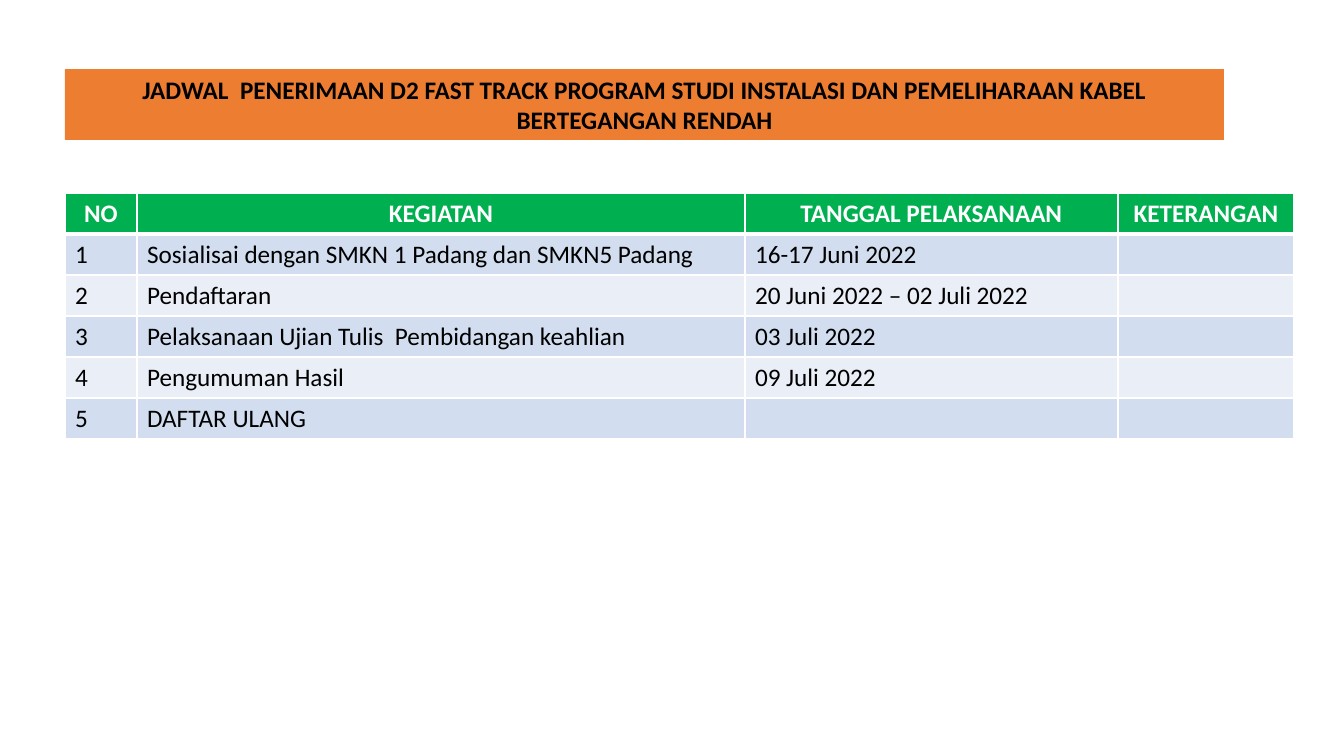
from dataclasses import dataclass
from lxml.etree import SubElement
from pptx import Presentation
from pptx.dml.color import RGBColor
from pptx.enum.shapes import MSO_SHAPE
from pptx.enum.text import MSO_ANCHOR, PP_ALIGN
from pptx.oxml.ns import qn
from pptx.util import Pt

PX = 9072


@dataclass(frozen=True)
class Theme:
    font: str = "Calibri"
    size: int = 18
    ink: str = "000000"
    white: str = "FFFFFF"
    banner: str = "ED7D31"
    head: str = "00B050"
    bands: tuple = ("D2DEEF", "EAEFF7")
    thin: int = 1
    thick: int = 3


THEME = Theme()
TITLE = ("JADWAL  PENERIMAAN D2 FAST TRACK PROGRAM STUDI INSTALASI "
         "DAN PEMELIHARAAN KABEL BERTEGANGAN RENDAH")
HEADS = ("NO", "KEGIATAN", "TANGGAL PELAKSANAAN", "KETERANGAN")
EVENTS = (
    ("Sosialisai dengan SMKN 1 Padang dan SMKN5 Padang", "16-17 Juni 2022"),
    ("Pendaftaran", "20 Juni 2022 – 02 Juli 2022"),
    ("Pelaksanaan Ujian Tulis  Pembidangan keahlian", "03 Juli 2022"),
    ("Pengumuman Hasil", "09 Juli 2022"),
    ("DAFTAR ULANG", ""),
)
WIDTHS = (72, 608, 373, 176)


def emu(*box):
    return [n * PX for n in box]


def paint(item, color):
    item.fill.solid()
    item.fill.fore_color.rgb = RGBColor.from_string(color)


def write(frame, text, color=THEME.ink, bold=False, align=PP_ALIGN.LEFT):
    frame.word_wrap = True
    para = frame.paragraphs[0]
    para.alignment = align
    para.font.size = Pt(THEME.size)
    if text:
        run = para.add_run()
        run.text = text
        run.font.name = THEME.font
        run.font.size = Pt(THEME.size)
        run.font.bold = bold
        run.font.color.rgb = RGBColor.from_string(color)


def border(cell, top, base):
    props = cell._tc.get_or_add_tcPr()
    sides = (("L", THEME.thin), ("R", THEME.thin), ("T", top), ("B", base))
    for spot, (side, width) in enumerate(sides):
        line = SubElement(props, qn(f"a:ln{side}"), w=str(Pt(width)))
        fill = SubElement(line, qn("a:solidFill"))
        SubElement(fill, qn("a:srgbClr"), val=THEME.white)
        props.insert(spot, line)


def banner(slide, box):
    shape = slide.shapes.add_shape(MSO_SHAPE.RECTANGLE, *emu(*box))
    shape.shadow.inherit = False
    shape.line.fill.background()
    paint(shape, THEME.banner)
    shape.text_frame.vertical_anchor = MSO_ANCHOR.MIDDLE
    write(shape.text_frame, TITLE, bold=True, align=PP_ALIGN.CENTER)


def schedule(slide, box):
    rows = [HEADS] + [(str(n), *event, "") for n, event in enumerate(EVENTS, 1)]
    table = slide.shapes.add_table(len(rows), len(HEADS), *emu(*box)).table
    for col, width in zip(table.columns, WIDTHS):
        col.width = width * PX
    for y, row in enumerate(rows):
        table.rows[y].height = box[3] * PX // len(rows)
        for x, text in enumerate(row):
            cell = table.cell(y, x)
            if y == 0:
                paint(cell, THEME.head)
                write(cell.text_frame, text, color=THEME.white, bold=True,
                      align=PP_ALIGN.CENTER)
            else:
                paint(cell, THEME.bands[(y - 1) % 2])
                write(cell.text_frame, text)
            border(cell, THEME.thick if y == 1 else THEME.thin,
                   THEME.thick if y == 0 else THEME.thin)


def main():
    deck = Presentation()
    deck.slide_width, deck.slide_height = emu(1344, 756)
    slide = deck.slides.add_slide(deck.slide_layouts[6])
    schedule(slide, (65, 193, sum(WIDTHS), 246))
    banner(slide, (65, 69, 1159, 71))
    deck.save("out.pptx")


if __name__ == "__main__":
    main()
